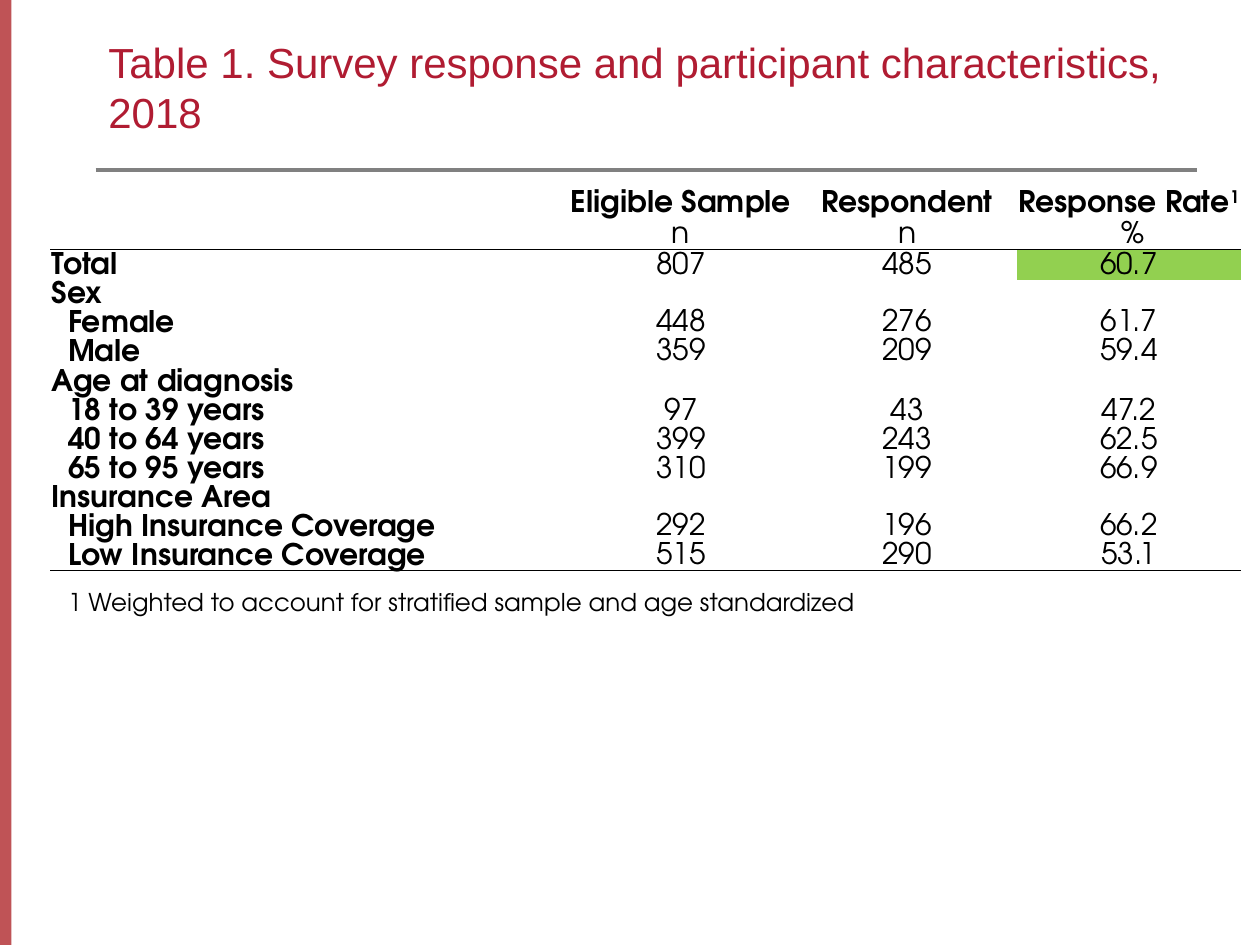
from dataclasses import dataclass

from lxml import etree
from pptx import Presentation
from pptx.dml.color import RGBColor
from pptx.enum.shapes import MSO_CONNECTOR, MSO_SHAPE
from pptx.enum.text import MSO_ANCHOR, MSO_AUTO_SIZE, PP_ALIGN
from pptx.oxml import parse_xml
from pptx.oxml.ns import nsdecls, qn
from pptx.util import Inches, Pt

RECTANGLE = MSO_SHAPE.RECTANGLE
STRAIGHT = MSO_CONNECTOR.STRAIGHT
TOP, BOTTOM = MSO_ANCHOR.TOP, MSO_ANCHOR.BOTTOM
LEFT, CENTER = PP_ALIGN.LEFT, PP_ALIGN.CENTER
NO_AUTOFIT = MSO_AUTO_SIZE.NONE
PLAIN_TABLE = "{2D5ABB26-0587-4C30-8999-92F81FD0307C}"

GRID_COLUMNS, GRID_ROWS = 100, 75


@dataclass(frozen=True)
class Theme:
    title_font: str = "Arial"
    table_font: str = "TeX Gyre Adventor"
    title_color: str = "B01C32"
    bar_color: str = "AF282C"
    rule_color: str = "808080"
    ink: str = "000000"
    highlight: str = "92D050"
    title_size: int = 24
    table_size: int = 17
    note_size: int = 14
    empty_size: int = 10
    line_height: int = 15
    indent: float = 0.14


TITLE = "Table 1. Survey response and participant characteristics, 2018"
HEADINGS = ["", "Eligible Sample", "Respondent", "Response Rate"]
UNITS = ["", "n", "n", " %"]
TOTAL = ["Total", "807", "485", "60.7"]
GROUPS = {
    "Sex": [
        ["Female", "448", "276", "61.7"],
        ["Male", "359", "209", "59.4"],
    ],
    "Age at diagnosis": [
        ["18 to 39 years", "97", "43", "47.2"],
        ["40 to 64 years", "399", "243", "62.5"],
        ["65 to 95 years", "310", "199", "66.9"],
    ],
    "Insurance Area": [
        ["High Insurance Coverage", "292", "196", "66.2"],
        ["Low Insurance Coverage", "515", "290", "53.1"],
    ],
}
FOOTNOTE = "1 Weighted to account for stratified sample and age standardized"

COLUMN_WIDTHS = [40.8, 18.5, 17.4, 17.8]
ROW_HEIGHT, NOTE_HEIGHT = 2.3, 3.6
TALLER_ROWS = {"": 2.5, "Total": 2.4, "Age at diagnosis": 2.4}


class SlideBuilder:
    def __init__(self, deck, theme):
        self.theme = theme
        self.column = deck.slide_width / GRID_COLUMNS
        self.row = deck.slide_height / GRID_ROWS
        layout = deck.slide_layouts.get_by_name("Title Only")
        self.slide = deck.slides.add_slide(layout)

    def across(self, columns):
        return round(columns * self.column)

    def down(self, rows):
        return round(rows * self.row)

    def box(self, left, top, width, height):
        return self.across(left), self.down(top), self.across(width), self.down(height)

    def run(self, paragraph, text, font, size, color, bold=False):
        run = paragraph.add_run()
        run.text = text
        run.font.name = font
        run.font.size = Pt(size)
        run.font.bold = bold
        run.font.color.rgb = RGBColor.from_string(color)
        return run

    def side_bar(self, width):
        bar = self.slide.shapes.add_shape(RECTANGLE, *self.box(0, 0, width, GRID_ROWS))
        bar.shadow.inherit = False
        bar.line.fill.background()
        bar.fill.solid()
        bar.fill.fore_color.rgb = RGBColor.from_string(self.theme.bar_color)
        color = bar.fill._xPr.find(qn("a:solidFill"))[0]
        etree.SubElement(color, qn("a:alpha"), val="80000")

    def rule(self, left, right, height, weight):
        y = self.down(height)
        line = self.slide.shapes.add_connector(
            STRAIGHT, self.across(left), y, self.across(right), y)
        line.line.color.rgb = RGBColor.from_string(self.theme.rule_color)
        line.line.width = Pt(weight)
        etree.SubElement(line._element.spPr, qn("a:effectLst"))

    def title(self, text, *place):
        holder = self.slide.shapes.title
        holder.left, holder.top, holder.width, holder.height = self.box(*place)
        frame = holder.text_frame
        frame.word_wrap = True
        frame.auto_size = NO_AUTOFIT
        frame.vertical_anchor = TOP
        frame.margin_left = frame.margin_right = Inches(0.1)
        frame.margin_top = frame.margin_bottom = Inches(0.1)
        paragraph = frame.paragraphs[0]
        paragraph.alignment = LEFT
        self.run(paragraph, text, self.theme.title_font,
                 self.theme.title_size, self.theme.title_color)

    def table(self, left, top, column_widths, row_heights):
        frame = self.slide.shapes.add_table(
            len(row_heights), len(column_widths),
            *self.box(left, top, sum(column_widths), sum(row_heights)))
        table = frame.table
        table.first_row = table.horz_banding = False
        table._tbl.tblPr.find(qn("a:tableStyleId")).text = PLAIN_TABLE
        for column, width in zip(table.columns, column_widths):
            column.width = self.across(width)
        for row, height in zip(table.rows, row_heights):
            row.height = self.down(height)
        return table

    def cell(self, cell, text, align=CENTER, bold=False, indent=0.0, size=None, fill=None):
        size = size or self.theme.table_size
        cell.vertical_anchor = BOTTOM
        cell.margin_left, cell.margin_top = Inches(indent), Inches(0.01)
        cell.margin_right = cell.margin_bottom = 0
        if fill:
            cell.fill.solid()
            cell.fill.fore_color.rgb = RGBColor.from_string(fill)
        else:
            cell.fill.background()
        paragraph = cell.text_frame.paragraphs[0]
        paragraph.alignment = align
        paragraph.line_spacing = Pt(self.theme.line_height)
        if text:
            self.run(paragraph, text, self.theme.table_font, size, self.theme.ink, bold)
        else:
            etree.SubElement(paragraph._p, qn("a:endParaRPr"),
                             sz=str(self.theme.empty_size * 100))
        return paragraph

    def underline(self, row):
        for cell in row.cells:
            cell._tc.get_or_add_tcPr().insert(0, parse_xml(
                f'<a:lnB {nsdecls("a")} w="{Pt(1)}"><a:solidFill>'
                f'<a:srgbClr val="{self.theme.ink}"/></a:solidFill></a:lnB>'))

    def survey_table(self, left, top):
        rows = [HEADINGS, UNITS, TOTAL]
        members = set()
        for group, entries in GROUPS.items():
            rows.append([group, "", "", ""])
            members.update(range(len(rows), len(rows) + len(entries)))
            rows.extend(entries)
        heights = [ROW_HEIGHT] + [TALLER_ROWS.get(row[0], ROW_HEIGHT) for row in rows[1:]]
        table = self.table(left, top, COLUMN_WIDTHS, heights + [NOTE_HEIGHT])

        for r, (label, *values) in enumerate(rows):
            self.cell(table.cell(r, 0), label, LEFT, True,
                      self.theme.indent if r in members else 0.01)
            for c, value in enumerate(values, 1):
                highlighted = rows[r] is TOTAL and c == len(values)
                paragraph = self.cell(table.cell(r, c), value, bold=rows[r] is HEADINGS,
                                      fill=self.theme.highlight if highlighted else None)
                if value == HEADINGS[-1]:
                    mark = self.run(paragraph, "1", self.theme.table_font,
                                    self.theme.table_size, self.theme.ink, True)
                    mark.font._element.set("baseline", "30000")

        note = table.cell(len(rows), 0)
        note.merge(table.cell(len(rows), len(COLUMN_WIDTHS) - 1))
        self.cell(note, FOOTNOTE, LEFT, indent=self.theme.indent, size=self.theme.note_size)
        for r in (rows.index(UNITS), len(rows) - 1):
            self.underline(table.rows[r])


def main():
    deck = Presentation()
    deck.slide_width, deck.slide_height = Inches(10), Inches(7.5)
    page = SlideBuilder(deck, Theme())
    page.side_bar(0.9)
    page.rule(7.6, 95, 13.5, 2.5)
    page.title(TITLE, 7.6, 1.9, 87.4, 11.8)
    page.survey_table(4, 15)
    deck.save("out.pptx")


if __name__ == "__main__":
    main()
